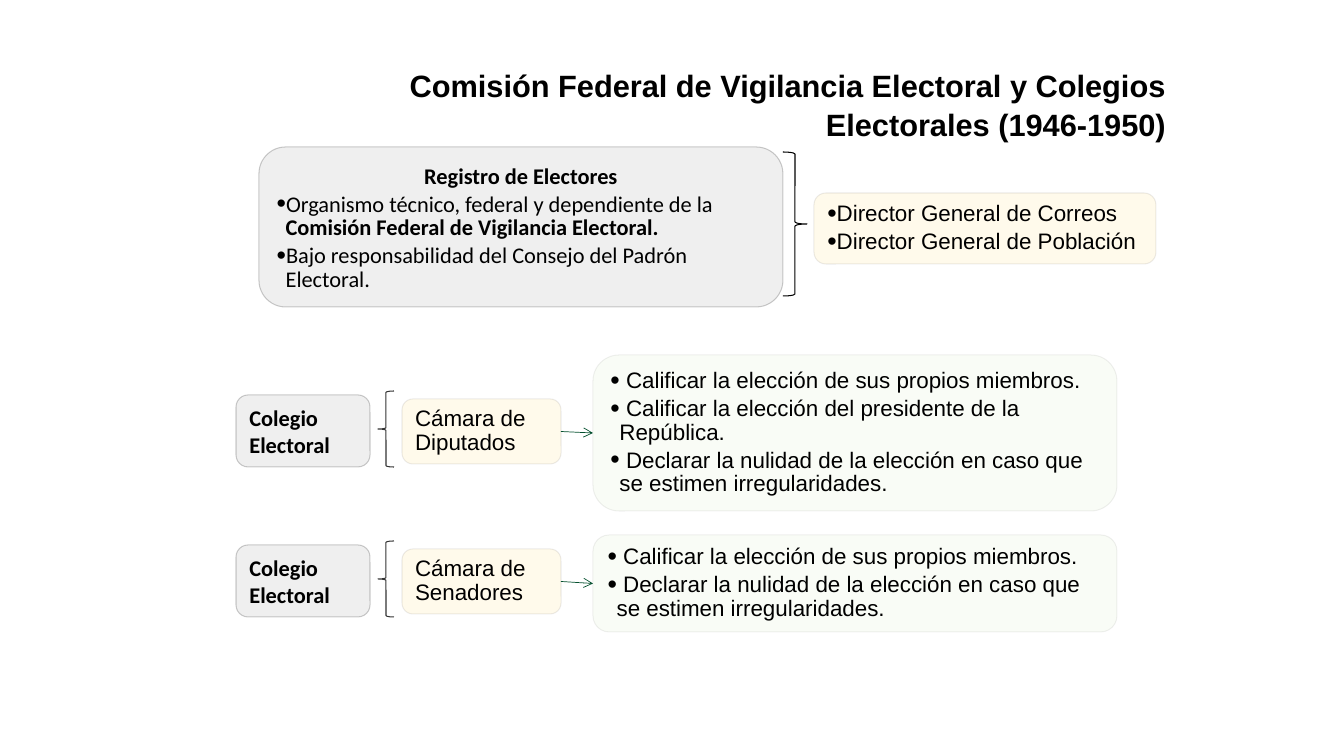
"""Builds the slide on the electoral registry and the electoral colleges of 1946-1950."""
from lxml import etree
from pptx import Presentation
from pptx.dml.color import RGBColor
from pptx.enum.shapes import MSO_CONNECTOR, MSO_SHAPE
from pptx.enum.text import MSO_ANCHOR, MSO_AUTO_SIZE, PP_ALIGN
from pptx.oxml.ns import qn
from pptx.util import Pt

PX = 914400 / 100.8
ROUNDED = MSO_SHAPE.ROUNDED_RECTANGLE
LEFT_BRACE, RIGHT_BRACE = MSO_SHAPE.LEFT_BRACE, MSO_SHAPE.RIGHT_BRACE
STRAIGHT = MSO_CONNECTOR.STRAIGHT
LEFT, CENTER, RIGHT = PP_ALIGN.LEFT, PP_ALIGN.CENTER, PP_ALIGN.RIGHT
JUSTIFY = PP_ALIGN.JUSTIFY
TOP, MIDDLE = MSO_ANCHOR.TOP, MSO_ANCHOR.MIDDLE
NO_FIT = MSO_AUTO_SIZE.NONE
BLACK, GREY, AMBER, LIME, GREEN = "000000", "B3B3B3", "FFC000", "92D050", "04502E"


def paint(fill, color, opacity=100):
    fill.solid()
    fill.fore_color.rgb = RGBColor.from_string(color)
    if opacity < 100:
        for tint in fill._xPr.iter(qn("a:srgbClr")):
            etree.SubElement(tint, qn("a:alpha"), val=str(opacity * 1000))


def add_panel(kind, box, color=None, opacity=100, texts=(), font="Arial",
              align=LEFT, line_opacity=100):
    panel = slide.shapes.add_shape(kind, *[round(v * PX) for v in box])
    panel.shadow.inherit = False
    panel.line.width = Pt(0.75)
    paint(panel.line.fill, BLACK, line_opacity)
    if color:
        paint(panel.fill, color, opacity)
    else:
        panel.fill.background()
    frame = panel.text_frame
    frame.word_wrap = True
    frame.vertical_anchor = MIDDLE
    for index, text in enumerate(texts):
        paragraph = frame.paragraphs[0] if index == 0 else frame.add_paragraph()
        bulleted = text.startswith("•")
        heading = font == "Calibri" and not bulleted
        paragraph.add_run().text = text.lstrip("•")
        paragraph.alignment = align
        paragraph.space_before = Pt(3.2)
        if not heading:
            paragraph.line_spacing = Pt(16.8)
        if bulleted:
            props = paragraph._p.get_or_add_pPr()
            props.set("marL", str(round(9 * PX)))
            props.set("indent", str(round(-9 * PX)))
            bullet_color = etree.SubElement(props, qn("a:buClr"))
            etree.SubElement(bullet_color, qn("a:srgbClr"), val=BLACK)
            etree.SubElement(props, qn("a:buSzPct"), val="120000")
            etree.SubElement(props, qn("a:buFont"), typeface="Arial")
            etree.SubElement(props, qn("a:buChar"), char="•")
        paragraph.font.name = font
        paragraph.font.size = Pt(16)
        paragraph.font.bold = heading
        paint(paragraph.font.fill, BLACK)
    return panel


prs = Presentation()
prs.slide_width, prs.slide_height = round(1344 * PX), round(756 * PX)
slide = prs.slides.add_slide(prs.slide_layouts[5])

title = slide.shapes.title
title.left, title.top, title.width, title.height = [
    round(v * PX) for v in (236, 60, 940, 85)]
title.text_frame.text = "Comisión Federal de Vigilancia Electoral y Colegios Electorales (1946-1950)"
title.text_frame.word_wrap = True
title.text_frame.auto_size = NO_FIT
title.text_frame.vertical_anchor = TOP
heading_line = title.text_frame.paragraphs[0]
heading_line.alignment = RIGHT
heading_line.line_spacing = 1.05
heading_line.font.name = "Arial"
heading_line.font.size = Pt(22)
heading_line.font.bold = True
paint(heading_line.font.fill, BLACK)

registry = add_panel(ROUNDED, (259, 147, 524, 160), GREY, 20, [
    "Registro de Electores",
    "•Organismo técnico, federal y dependiente de la ",
    "•Bajo responsabilidad del Consejo del Padrón Electoral.",
], "Calibri")
registry_name, registry_nature, _ = registry.text_frame.paragraphs
registry_name.alignment = CENTER
commission = registry_nature.add_run()
commission.text = "Comisión Federal de Vigilancia Electoral."
commission.font.bold = True

add_panel(RIGHT_BRACE, (783, 152, 24, 144))
add_panel(ROUNDED, (814, 193, 342, 71), AMBER, 8, [
    "•Director General de Correos",
    "•Director General de Población",
], align=JUSTIFY)

OWN_MEMBERS = "• Calificar la elección de sus propios miembros."
PRESIDENT = "• Calificar la elección del presidente de la República."
NULLITY = "• Declarar la nulidad de la elección en caso que se estimen irregularidades."
colleges = [
    (395, ["Colegio Electoral"], "Cámara de Diputados", 355, 156,
     [OWN_MEMBERS, PRESIDENT, NULLITY]),
    (545, ["Colegio", "Electoral"], "Cámara de Senadores", 535, 97,
     [OWN_MEMBERS, NULLITY]),
]
for top, college_lines, chamber_name, duties_top, duties_height, duty_list in colleges:
    college = add_panel(ROUNDED, (236, top, 134, 72), GREY, 20, college_lines, "Calibri")
    for line in college.text_frame.paragraphs:
        line.space_before = Pt(0)
    add_panel(LEFT_BRACE, (378, top - 4, 16, 76), line_opacity=80)
    chamber = add_panel(ROUNDED, (402, top + 4, 159, 65), AMBER, 8, [chamber_name])
    duties = add_panel(ROUNDED, (593, duties_top, 524, duties_height), LIME, 5, duty_list)
    arrow = slide.shapes.add_connector(STRAIGHT, 0, 0, 0, 0)
    arrow.begin_connect(chamber, 3)
    arrow.end_connect(duties, 1)
    arrow.line.width = Pt(0.5)
    paint(arrow.line.fill, GREEN)
    etree.SubElement(arrow.line._get_or_add_ln(), qn("a:tailEnd"), type="arrow")
    etree.SubElement(arrow._element.spPr, qn("a:effectLst"))

prs.save("out.pptx")
